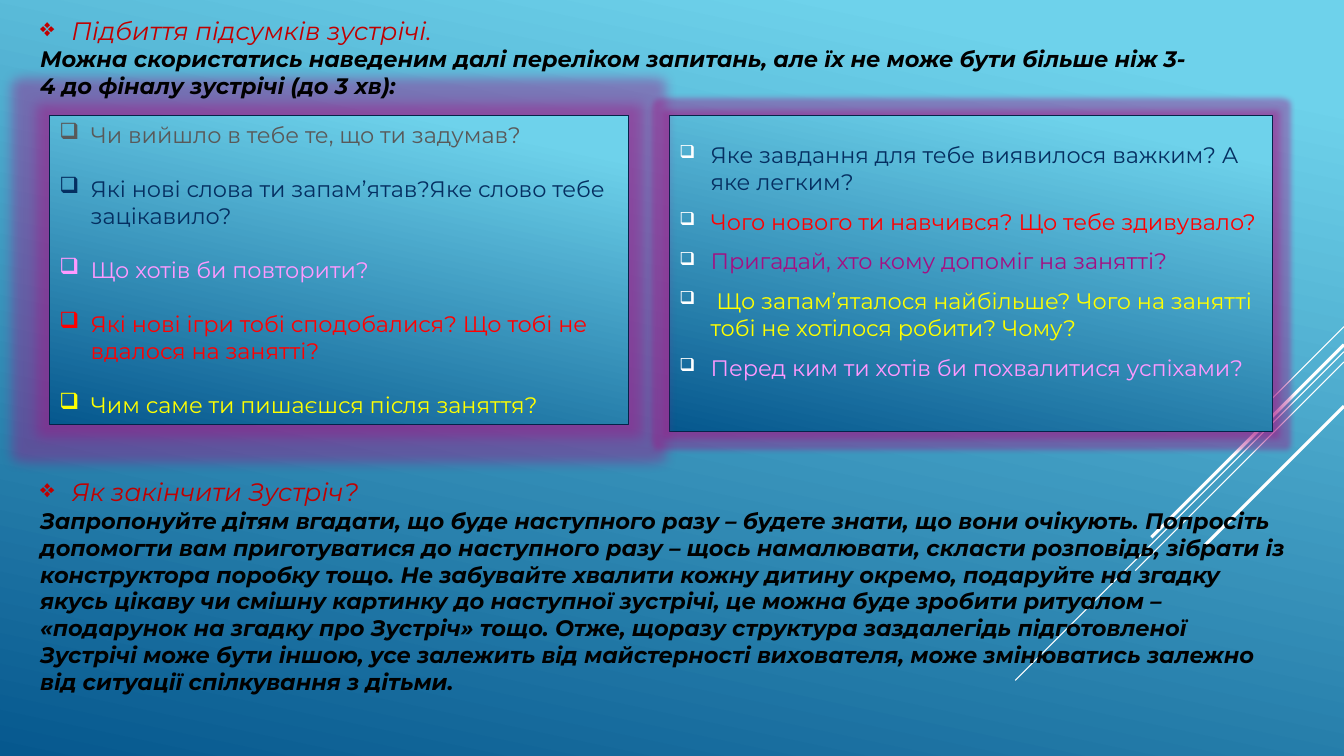
from lxml import etree
from pptx import Presentation, util as u
from pptx.dml.color import RGBColor
from pptx.enum import shapes, text
from pptx.oxml.ns import qn

COLORS = {
    "sky": "6ED2EB", "deep": "06588E", "border": "042349", "glow": "A50E82",
    "white": "FFFFFF", "black": "000000", "crimson": "C00000", "gray": "595959",
    "navy": "052F61", "red": "FF0000", "purple": "A50E82", "yellow": "FFFF00",
    "pink": "FF99FF",
}

presentation = Presentation()
presentation.slide_width = u.Inches(13.33)
presentation.slide_height = u.Inches(7.5)
column = presentation.slide_width / 100
row = presentation.slide_height / 100
slide = presentation.slides.add_slide(presentation.slide_layouts[6])


def paint_gradient(fill):
    fill.gradient()
    fill.gradient_angle = 258
    for stop, name, position in zip(fill.gradient_stops, ("sky", "deep"), (0.1, 1)):
        stop.color.rgb = RGBColor.from_string(COLORS[name])
        stop.position = position


def write_paragraph(frame, words, size, color, bullet=None, bullet_color=None, scale=100):
    paragraph = frame.paragraphs[0]
    if paragraph.runs:
        paragraph = frame.add_paragraph()
    paragraph.add_run().text = words
    paragraph.alignment = text.PP_ALIGN.LEFT
    if bullet:
        properties = paragraph._p.get_or_add_pPr()
        properties.set("marL", str(u.Inches(0.31)))
        properties.set("indent", str(-u.Inches(0.31)))
        tint = etree.SubElement(properties, qn("a:buClr"))
        etree.SubElement(tint, qn("a:srgbClr"), val=COLORS[bullet_color or color])
        etree.SubElement(properties, qn("a:buSzPct"), val=str(scale * 1000))
        etree.SubElement(properties, qn("a:buChar"), char=bullet)
    paragraph.font.name = "Montserrat"
    paragraph.font.size = u.Pt(size)
    paragraph.font.color.rgb = RGBColor.from_string(COLORS[color])
    return paragraph


paint_gradient(slide.background.fill)

diagonals = [
    (43.2, 13.33, 0.75), (46.53, 43.47, 0.75), (47.87, 27.6, 0.75),
    (45.6, 25.47, 2.25), (53.73, 18.53, 2.25),
]
for top, drop, weight in diagonals:
    right = presentation.slide_width
    line = slide.shapes.add_connector(
        shapes.MSO_CONNECTOR.STRAIGHT,
        right, int(top * row), int(right - drop * row), int((top + drop) * row))
    line.line.color.rgb = RGBColor.from_string(COLORS["white"])
    line.line.width = u.Pt(weight)
    etree.SubElement(line._element.spPr, qn("a:effectLst"))

right_questions = [
    ("Яке завдання для тебе виявилося важким? А яке легким?", "navy"),
    ("Чого нового ти навчився? Що тебе здивувало?", "red"),
    ("Пригадай, хто кому допоміг на занятті?", "purple"),
    (" Що запам’яталося найбільше? Чого на занятті тобі не хотілося робити? Чому?", "yellow"),
    ("Перед ким ти хотів би похвалитися успіхами?", "pink"),
]
left_questions = [
    ("Чи вийшло в тебе те, що ти задумав?", "gray"),
    ("Які нові слова ти запам’ятав?Яке слово тебе зацікавило?", "navy"),
    ("Що хотів би повторити?", "pink"),
    ("Які нові ігри тобі сподобалися? Що тобі не вдалося на занятті?", "red"),
    ("Чим саме ти пишаєшся після заняття?", "yellow"),
]
panels = [
    (49.81, 44.86, 41.73, 8, right_questions, text.MSO_ANCHOR.MIDDLE, 0.3, "white", 80, 3.2, 6),
    (3.68, 43.06, 40.8, 18, left_questions, text.MSO_ANCHOR.TOP, 0.05, None, 100, 19.5, 0),
]
for left, width, height, radius, questions, anchor, bottom, bullet_color, scale, before, after in panels:
    panel = slide.shapes.add_shape(
        shapes.MSO_SHAPE.RECTANGLE,
        int(left * column), int(15.33 * row), int(width * column), int(height * row))
    paint_gradient(panel.fill)
    panel.line.color.rgb = RGBColor.from_string(COLORS["border"])
    panel.line.width = u.Pt(0.75)
    panel.shadow.inherit = False
    effects = panel._element.spPr.find(qn("a:effectLst"))
    glow = etree.SubElement(effects, qn("a:glow"), rad=str(u.Pt(radius)))
    glow_color = etree.SubElement(glow, qn("a:srgbClr"), val=COLORS["glow"])
    etree.SubElement(glow_color, qn("a:alpha"), val="40000")
    frame = panel.text_frame
    frame.word_wrap = True
    frame.vertical_anchor = anchor
    frame.margin_bottom = u.Inches(bottom)
    for index, (question, color) in enumerate(questions):
        paragraph = write_paragraph(frame, question, 16, color, "❑", bullet_color, scale)
        paragraph.space_before = u.Pt(before if index else 0)
        paragraph.space_after = u.Pt(after)

sections = [
    (62.4, 94.3, 30.53, "Як закінчити Зустріч?",
     "Запропонуйте дітям вгадати, що буде наступного разу – будете знати, що вони очікують. "
     "Попросіть допомогти вам приготуватися до наступного разу – щось намалювати, скласти "
     "розповідь, зібрати із конструктора поробку тощо. Не забувайте хвалити кожну дитину окремо, "
     "подаруйте на згадку якусь цікаву чи смішну картинку до наступної зустрічі, це можна буде "
     "зробити ритуалом – «подарунок на згадку про Зустріч» тощо. Отже, щоразу структура "
     "заздалегідь підготовленої Зустрічі може бути іншою, усе залежить від майстерності "
     "вихователя, може змінюватись залежно від ситуації спілкування з дітьми."),
    (1.33, 87.77, 12.53, "Підбиття підсумків зустрічі.",
     "Можна скористатись наведеним далі переліком запитань, але їх не може бути більше ніж 3-4 "
     "до фіналу зустрічі (до 3 хв):"),
]
for top, width, height, heading, body in sections:
    box = slide.shapes.add_textbox(
        int(2.25 * column), int(top * row), int(width * column), int(height * row))
    frame = box.text_frame
    frame.word_wrap = True
    write_paragraph(frame, heading, 18, "crimson", "❖").font.italic = True
    paragraph = write_paragraph(frame, body, 16, "black")
    paragraph.font.bold = True
    paragraph.font.italic = True

presentation.save("out.pptx")
